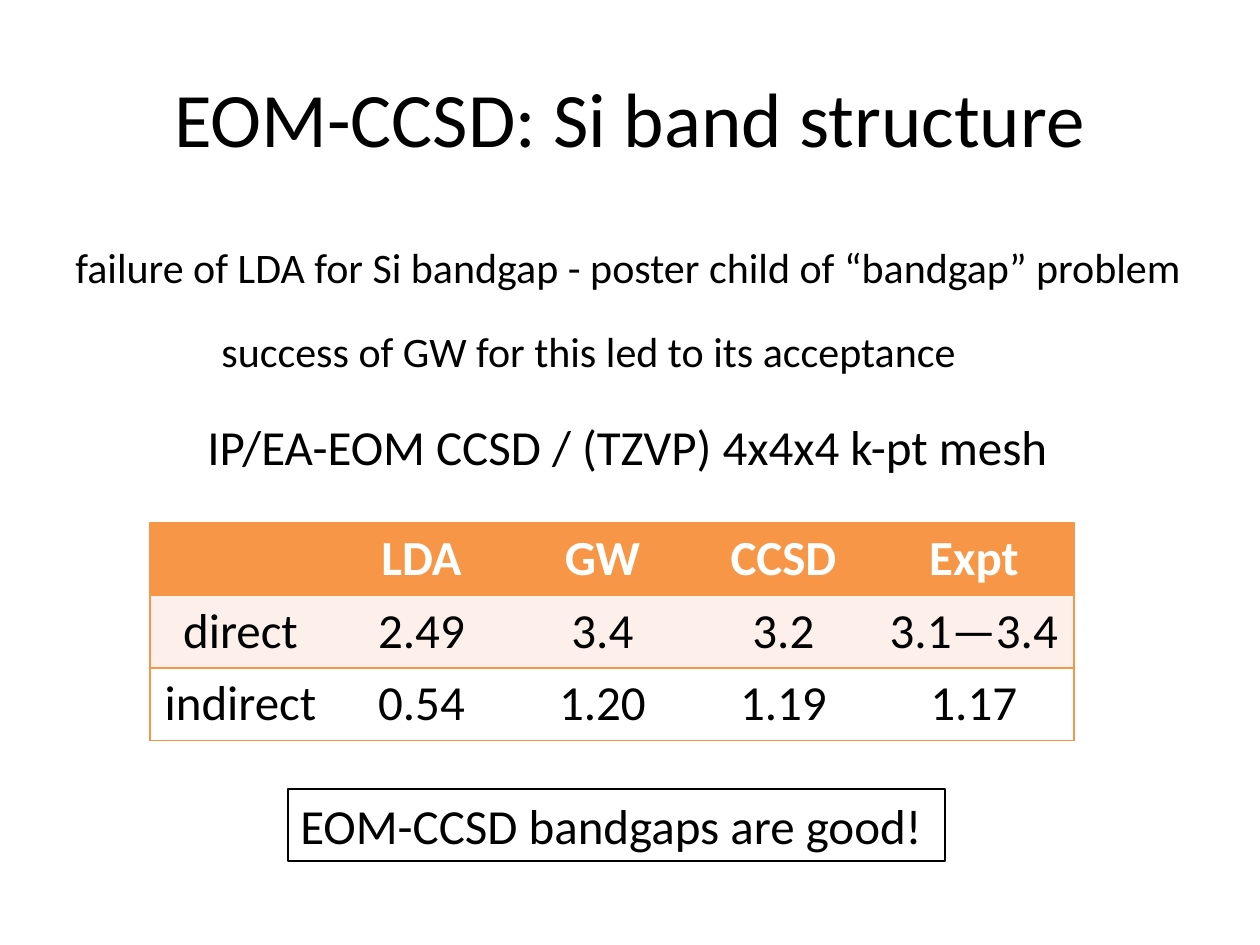
from dataclasses import dataclass
from typing import Any

import pptx
import pptx.dml.color
import pptx.enum.shapes
import pptx.enum.text
import pptx.oxml
import pptx.oxml.ns
import pptx.util

PX_PER_INCH = 126


@dataclass(frozen=True)
class Theme:
    font: str = "Calibri"
    text: str = "000000"
    header_text: str = "FFFFFF"
    accent: str = "F79646"
    band: str = "FDEFE9"
    plain: str = "FFFFFF"
    title: int = 44
    large: int = 28
    note: int = 24
    border: float = 1
    outline: float = 0.75


@dataclass(frozen=True)
class Box:
    x: int
    y: int
    w: int
    h: int


@dataclass(frozen=True)
class Label:
    text: str
    box: Box
    size: int
    outlined: bool = False


THEME = Theme()
TITLE = Label("EOM-CCSD: Si band structure", Box(63, 38, 1134, 157), THEME.title)
LABELS = [
    Label("failure of LDA for Si bandgap - poster child of “bandgap” problem",
          Box(63, 235, 1160, 63), THEME.note),
    Label("success of GW for this led to its acceptance",
          Box(209, 319, 770, 63), THEME.note),
    Label("IP/EA-EOM CCSD / (TZVP) 4x4x4 k-pt mesh",
          Box(195, 410, 881, 72), THEME.large),
    Label("EOM-CCSD bandgaps are good!",
          Box(288, 789, 657, 72), THEME.large, outlined=True),
]
BANDGAPS = [
    ["", "LDA", "GW", "CCSD", "Expt"],
    ["direct", "2.49", "3.4", "3.2", "3.1—3.4"],
    ["indirect", "0.54", "1.20", "1.19", "1.17"],
]
ROW_FILLS = [THEME.accent, THEME.band, THEME.plain]
COLUMN_WIDTHS = [181, 181, 181, 181, 200]
ROW_HEIGHT = 72
TABLE_ORIGIN = (150, 523)


def px(n: int) -> pptx.util.Emu:
    return pptx.util.Emu(round(n * pptx.util.Inches(1) / PX_PER_INCH))


def rgb(color: str) -> pptx.dml.color.RGBColor:
    return pptx.dml.color.RGBColor.from_string(color)


def area(box: Box) -> list[pptx.util.Emu]:
    return [px(n) for n in (box.x, box.y, box.w, box.h)]


def apply(target: Any, values: dict[str, Any]) -> None:
    for name, value in values.items():
        setattr(target, name, value)


def write(tf: Any, text: str, size: int, color: str = THEME.text,
          bold: bool = False, centered: bool = False) -> None:
    align = pptx.enum.text.PP_ALIGN
    p = tf.paragraphs[0]
    p.alignment = align.CENTER if centered else align.LEFT
    r = p.add_run()
    r.text = text
    apply(r.font, {"name": THEME.font, "size": pptx.util.Pt(size), "bold": bold})
    r.font.color.rgb = rgb(color)


def add_title(slide: Any, label: Label) -> None:
    sp = slide.shapes.title
    apply(sp, dict(zip(("left", "top", "width", "height"), area(label.box))))
    sp.text_frame.vertical_anchor = pptx.enum.text.MSO_ANCHOR.MIDDLE
    write(sp.text_frame, label.text, label.size, centered=True)


def add_label(slide: Any, label: Label) -> None:
    if label.outlined:
        sp = slide.shapes.add_shape(
            pptx.enum.shapes.MSO_SHAPE.RECTANGLE, *area(label.box))
        sp.shadow.inherit = False
        sp.fill.background()
        sp.line.color.rgb = rgb(THEME.text)
        sp.line.width = pptx.util.Pt(THEME.outline)
    else:
        sp = slide.shapes.add_textbox(*area(label.box))
    apply(sp.text_frame, {"word_wrap": True,
                          "vertical_anchor": pptx.enum.text.MSO_ANCHOR.TOP})
    write(sp.text_frame, label.text, label.size)


def set_borders(cell: Any, visible: str) -> None:
    ns = pptx.oxml.ns.nsdecls("a")
    tc_pr = cell._tc.get_or_add_tcPr()
    for side in "LRTB":
        paint = (f'<a:solidFill><a:srgbClr val="{THEME.accent}"/></a:solidFill>'
                 if side in visible else "<a:noFill/>")
        width = pptx.util.Pt(THEME.border)
        tc_pr.append(pptx.oxml.parse_xml(
            f'<a:ln{side} {ns} w="{width}">{paint}</a:ln{side}>'))


def add_bandgap_table(slide: Any) -> None:
    box = Box(*TABLE_ORIGIN, sum(COLUMN_WIDTHS), ROW_HEIGHT * len(BANDGAPS))
    table = slide.shapes.add_table(
        len(BANDGAPS), len(COLUMN_WIDTHS), *area(box)).table
    for column, width in zip(table.columns, COLUMN_WIDTHS):
        column.width = px(width)
    last = len(COLUMN_WIDTHS) - 1
    for i, (row, fill) in enumerate(zip(BANDGAPS, ROW_FILLS)):
        header = i == 0
        color = THEME.header_text if header else THEME.text
        for j, text in enumerate(row):
            cell = table.cell(i, j)
            set_borders(cell, "TB" + ("L" if j == 0 else "R" if j == last else ""))
            cell.fill.solid()
            cell.fill.fore_color.rgb = rgb(fill)
            if text:
                write(cell.text_frame, text, THEME.large, color, header, centered=True)


def main() -> None:
    prs = pptx.Presentation()
    apply(prs, {"slide_width": px(1260), "slide_height": px(945)})
    slide = prs.slides.add_slide(prs.slide_layouts.get_by_name("Title Only"))
    add_title(slide, TITLE)
    add_bandgap_table(slide)
    for label in LABELS:
        add_label(slide, label)
    prs.save("out.pptx")


if __name__ == "__main__":
    main()
